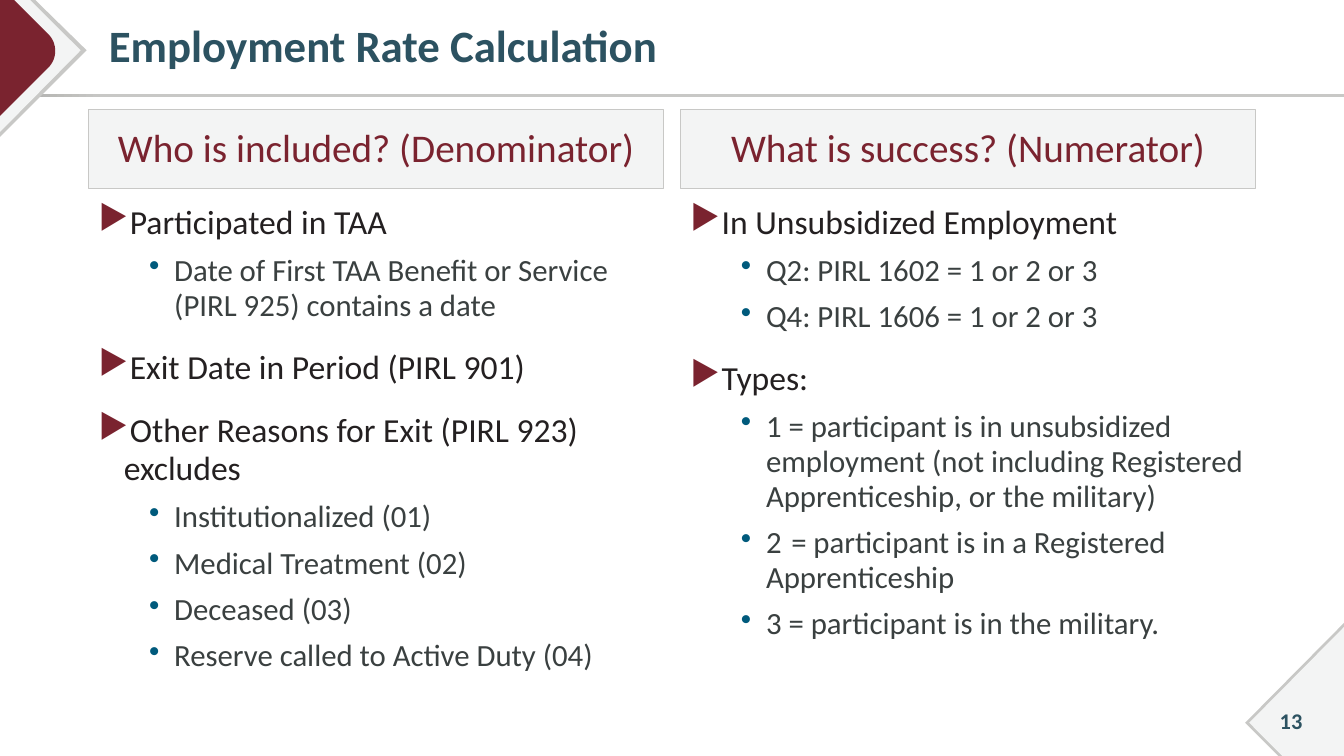
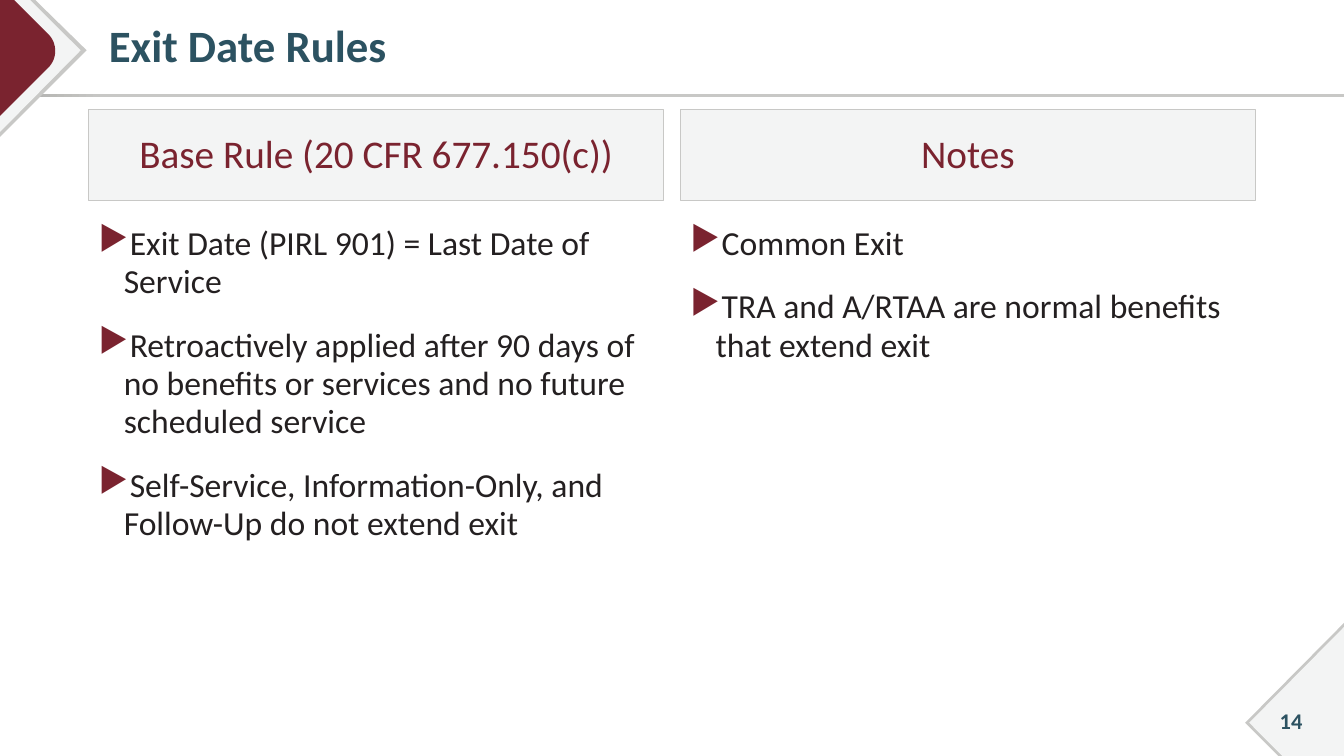
"""Build two slides that compare employment rate and exit date rules in columns."""
from lxml.etree import SubElement
from pptx import Presentation
from pptx.dml.color import RGBColor
from pptx.enum.shapes import MSO_SHAPE as Shape
from pptx.enum.text import MSO_ANCHOR as Anchor, PP_ALIGN as Align
from pptx.oxml.ns import qn
from pptx.util import Inches, Pt

WIDTH, HEIGHT = 13.33, 7.5
MARGIN, COLUMN, GUTTER = 0.88, 5.7, 0.17
HEADER_TOP = 1.09
FONT = "Calibri"
NAVY, MAROON, BLUE = "2C5261", "7A232F", "005A7C"
INK, SLATE = "242021", "3A4040"
PALE, GREY, DARK_GREY = "F3F4F4", "C8C8C6", "ABABA8"

LEVELS = (
    {"mark": "▶", "mark_color": MAROON, "left": 0.25, "size": 24, "color": INK, "before": 18},
    {"mark": "•", "mark_color": BLUE, "left": 0.75, "size": 22, "color": SLATE, "before": 8},
)

ROUNDED = [(0.48, 0.34), (0.57, 0.43), (0.57, 0.58), (0.48, 0.67)]


def rgb(code):
    return RGBColor.from_string(code)


def bezier(points, steps=16):
    def blend(t):
        weights = ((1 - t) ** 3, 3 * t * (1 - t) ** 2, 3 * t * t * (1 - t), t ** 3)
        return tuple(sum(w * p[axis] for w, p in zip(weights, points)) for axis in (0, 1))

    return [blend(step / steps) for step in range(steps + 1)]


CORNERS = (
    (GREY, [(0, 0), (0.35, 0), (0.86, 0.5), (0, 1.36)]),
    (PALE, [(0, 0), (0.3, 0), (0.8, 0.5), (0, 1.31)]),
    (MAROON, [(0, 0), (0.14, 0), *bezier(ROUNDED), (0, 1.15)]),
    (GREY, [(WIDTH, 6.18), (WIDTH, HEIGHT), (12.68, HEIGHT), (12.35, 7.17)]),
    (PALE, [(WIDTH, 6.22), (WIDTH, HEIGHT), (12.72, HEIGHT), (12.39, 7.17)]),
)


class Deck:
    def __init__(self):
        self.prs = Presentation()
        self.prs.slide_width, self.prs.slide_height = Inches(WIDTH), Inches(HEIGHT)
        self.slide = None

    def start(self, title, number):
        self.slide = self.prs.slides.add_slide(self.prs.slide_layouts[5])
        self.rule()
        for color, outline in CORNERS:
            self.corner(color, outline)
        self.title(title)
        self.number(number)

    def box(self, left, top, width, height):
        return [Inches(value) for value in (left, top, width, height)]

    def add_text(self, paragraph, text, size, color, bold=False):
        run = paragraph.add_run()
        run.text = text
        run.font.name, run.font.size, run.font.bold = FONT, Pt(size), bold
        run.font.color.rgb = rgb(color)

    def rule(self):
        band = self.slide.shapes.add_shape(Shape.RECTANGLE, *self.box(0, 0.93, WIDTH, 0.03))
        band.shadow.inherit = False
        band.line.fill.background()
        band.fill.gradient()
        band.fill.gradient_angle = 0
        for stop, color, position in zip(band.fill.gradient_stops, (DARK_GREY, GREY), (0, 0.08)):
            stop.color.rgb, stop.position = rgb(color), position

    def corner(self, color, outline):
        points = [(Inches(x), Inches(y)) for x, y in outline]
        builder = self.slide.shapes.build_freeform(*points[0])
        builder.add_line_segments(points[1:], close=True)
        facet = builder.convert_to_shape()
        facet.shadow.inherit = False
        facet.fill.solid()
        facet.fill.fore_color.rgb = rgb(color)
        facet.line.fill.background()

    def title(self, text):
        heading = self.slide.shapes.title
        heading.left, heading.top, heading.width, heading.height = self.box(MARGIN, 0.05, 12.12, 0.86)
        frame = heading.text_frame
        frame.vertical_anchor, frame.margin_left = Anchor.MIDDLE, Inches(0.2)
        paragraph = frame.paragraphs[0]
        paragraph.alignment, paragraph.line_spacing = Align.LEFT, 0.9
        self.add_text(paragraph, text, 32, NAVY, bold=True)

    def number(self, value):
        frame = self.slide.shapes.add_textbox(*self.box(12.45, 6.95, 0.71, 0.4)).text_frame
        frame.word_wrap, frame.vertical_anchor = True, Anchor.MIDDLE
        frame.paragraphs[0].alignment = Align.CENTER
        self.add_text(frame.paragraphs[0], str(value), 16, NAVY, bold=True)

    def header(self, left, height, text):
        panel = self.slide.shapes.add_shape(Shape.RECTANGLE, *self.box(left, HEADER_TOP, COLUMN, height))
        panel.shadow.inherit = False
        panel.fill.solid()
        panel.fill.fore_color.rgb = rgb(PALE)
        panel.line.color.rgb, panel.line.width = rgb(GREY), Pt(0.75)
        panel.text_frame.vertical_anchor = Anchor.MIDDLE
        paragraph = panel.text_frame.paragraphs[0]
        paragraph.alignment, paragraph.line_spacing = Align.CENTER, 0.95
        self.add_text(paragraph, text, 28, MAROON)

    def bullets(self, left, top, height, items):
        frame = self.slide.shapes.add_textbox(*self.box(left, top, COLUMN, height)).text_frame
        frame.word_wrap = True
        for index, (level, text) in enumerate(items):
            style = LEVELS[level]
            paragraph = frame.add_paragraph() if index else frame.paragraphs[0]
            paragraph.level, paragraph.line_spacing = level, 0.95
            paragraph.space_before = Pt(style["before"] if index else 0)
            self.mark(paragraph, style)
            self.add_text(paragraph, text, style["size"], style["color"])

    def mark(self, paragraph, style):
        props = paragraph._p.get_or_add_pPr()
        props.set("marL", str(Inches(style["left"])))
        props.set("indent", str(Inches(-0.25)))
        tint = SubElement(props, qn("a:buClr"))
        SubElement(tint, qn("a:srgbClr")).set("val", style["mark_color"])
        SubElement(props, qn("a:buChar")).set("char", style["mark"])

    def columns(self, header_height, body_top, body_height, contents):
        for index, (heading, items) in enumerate(contents):
            left = MARGIN + index * (COLUMN + GUTTER)
            self.header(left, header_height, heading)
            self.bullets(left, body_top, body_height, items)


def main():
    deck = Deck()
    deck.start("Employment Rate Calculation", 13)
    deck.columns(0.78, 1.97, 4.98, [
        ("Who is included? (Denominator)", [
            (0, "Participated in TAA"),
            (1, "Date of First TAA Benefit or Service (PIRL 925) contains a date"),
            (0, "Exit Date in Period (PIRL 901)"),
            (0, "Other Reasons for Exit (PIRL 923) excludes"),
            (1, "Institutionalized (01)"),
            (1, "Medical Treatment (02)"),
            (1, "Deceased (03)"),
            (1, "Reserve called to Active Duty (04)"),
        ]),
        ("What is success? (Numerator)", [
            (0, "In Unsubsidized Employment"),
            (1, "Q2: PIRL 1602 = 1 or 2 or 3"),
            (1, "Q4: PIRL 1606 = 1 or 2 or 3"),
            (0, "Types:"),
            (1, "1 = participant is in unsubsidized employment "
                "(not including Registered Apprenticeship, or the military)"),
            (1, "2\t= participant is in a Registered Apprenticeship"),
            (1, "3 = participant is in the military."),
        ]),
    ])
    deck.start("Exit Date Rules", 14)
    deck.columns(0.9, 2.18, 4.59, [
        ("Base Rule (20 CFR 677.150(c))", [
            (0, "Exit Date (PIRL 901) = Last Date of Service"),
            (0, "Retroactively applied after 90 days of no benefits or services "
                "and no future scheduled service"),
            (0, "Self-Service, Information-Only, and Follow-Up do not extend exit"),
        ]),
        ("Notes", [
            (0, "Common Exit"),
            (0, "TRA and A/RTAA are normal benefits that extend exit"),
        ]),
    ])
    deck.prs.save("out.pptx")


if __name__ == "__main__":
    main()
